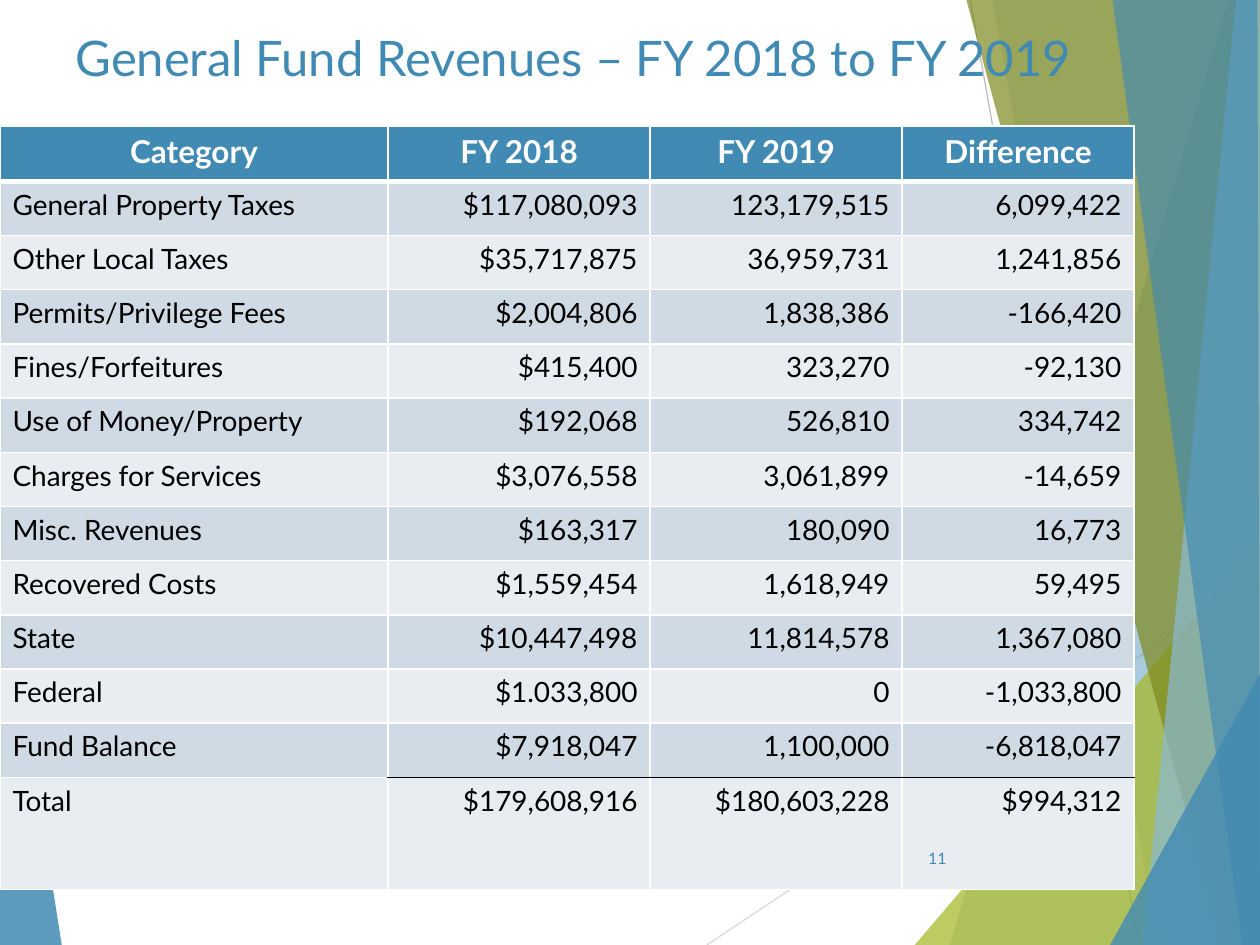
import lxml.etree
import pptx
import pptx.dml.color
import pptx.enum.shapes
import pptx.enum.text
import pptx.oxml.ns
import pptx.util

COLORS = {
    "blue": "418AB3", "sky": "8ABAD4", "lime": "A6B727", "olive": "7D891D",
    "silver": "D9D9D9", "gray": "BFBFBF", "white": "FFFFFF", "black": "000000",
    "band_dark": "CFDAE5", "band_light": "E9EDF2",
}
FONT = "Lato"
COLS, ROWS = 100, 75  # slide grid
ALIGN = pptx.enum.text.PP_ALIGN
ANCHOR = pptx.enum.text.MSO_ANCHOR

# Bands of the backdrop, back to front: colour, opacity in percent, corners
LEFT_BAND = ("blue", 85, [(0, 43.9), (4.9, 75), (0, 75)])
RIGHT_BANDS = [
    ("blue", 30, [(97.5, 0), (75.4, 75), (100, 75), (100, 0)]),
    ("blue", 20, [(78.8, 0), (91.9, 75), (100, 75), (100, 0)]),
    ("lime", 72, [(72.6, 75), (100, 42.9), (100, 75)]),
    ("olive", 70, [(76.7, 0), (97, 75), (100, 75), (100, 0)]),
    ("sky", 70, [(98.1, 0), (90.7, 75), (100, 75), (100, 0)]),
    ("blue", 65, [(88.3, 0), (98.6, 75), (100, 75), (99.8, 0)]),
    ("blue", 80, [(88.1, 75), (100, 53.5), (100, 75)]),
]
REVENUES = [
    ("Category", "FY 2018", "FY 2019", "Difference"),
    ("General Property Taxes", "$117,080,093", "123,179,515", "6,099,422"),
    ("Other Local Taxes", "$35,717,875", "36,959,731", "1,241,856"),
    ("Permits/Privilege Fees", "$2,004,806", "1,838,386", "-166,420"),
    ("Fines/Forfeitures", "$415,400", "323,270", "-92,130"),
    ("Use of Money/Property", "$192,068", "526,810", "334,742"),
    ("Charges for Services", "$3,076,558", "3,061,899", "-14,659"),
    ("Misc. Revenues", "$163,317", "180,090", "16,773"),
    ("Recovered Costs", "$1,559,454", "1,618,949", "59,495"),
    ("State", "$10,447,498", "11,814,578", "1,367,080"),
    ("Federal", "$1.033,800", "0", "-1,033,800"),
    ("Fund Balance", "$7,918,047", "1,100,000", "-6,818,047"),
    ("Total", "$179,608,916", "$180,603,228", "$994,312"),
]


def rgb(name):
    return pptx.dml.color.RGBColor.from_string(COLORS[name])


def sub(parent, tag, **attrs):
    return lxml.etree.SubElement(parent, pptx.oxml.ns.qn(tag), attrs)


class Deck:
    def __init__(self):
        self.prs = pptx.Presentation()
        self.prs.slide_width = pptx.util.Inches(10)
        self.prs.slide_height = pptx.util.Inches(7.5)
        self.s = self.prs.slides.add_slide(self.prs.slide_layouts[5])

    def x(self, cols):
        return round(self.prs.slide_width * cols / COLS)

    def y(self, rows):
        return round(self.prs.slide_height * rows / ROWS)

    def box(self, left, top, width, height):
        return self.x(left), self.y(top), self.x(width), self.y(height)

    def add_text(self, tf, text, size, color, align=ALIGN.LEFT, bold=False):
        p = tf.paragraphs[0]
        p.alignment = align
        r = p.add_run()
        r.text = text
        r.font.name, r.font.size, r.font.bold = FONT, pptx.util.Pt(size), bold
        r.font.color.rgb = rgb(color)

    def band(self, color, opacity, corners):
        points = [(self.x(cx), self.y(cy)) for cx, cy in corners]
        builder = self.s.shapes.build_freeform(*points[0])
        builder.add_line_segments(points[1:], close=True)
        sp = builder.convert_to_shape()
        sp.shadow.inherit = False
        sp.line.fill.background()
        sp.fill.solid()
        sp.fill.fore_color.rgb = rgb(color)
        clr = sp._element.spPr.find(".//" + pptx.oxml.ns.qn("a:srgbClr"))
        sub(clr, "a:alpha", val=str(opacity * 1000))

    def line(self, x1, y1, x2, y2, color):
        cxn = self.s.shapes.add_connector(
            pptx.enum.shapes.MSO_CONNECTOR.STRAIGHT,
            self.x(x1), self.y(y1), self.x(x2), self.y(y2))
        cxn.line.color.rgb = rgb(color)
        cxn.line.width = pptx.util.Pt(0.75)
        sub(cxn._element.spPr, "a:effectLst")

    def title(self, text, *area):
        sp = self.s.shapes.title
        self.s.shapes._spTree.append(sp._element)  # in front of the backdrop
        sp.left, sp.top, sp.width, sp.height = self.box(*area)
        tf = sp.text_frame
        tf.auto_size = pptx.enum.text.MSO_AUTO_SIZE.NONE
        tf.vertical_anchor = ANCHOR.TOP
        self.add_text(tf, text, 28, "blue")

    def borders(self, cell, **edges):
        """Draw white 1 pt edges, except those given as edge=(colour, points)."""
        tcPr = cell._tc.get_or_add_tcPr()
        for edge in "LRTB":
            color, width = edges.get(edge, ("white", 1))
            ln = sub(tcPr, "a:ln" + edge, w=str(pptx.util.Pt(width)))
            sub(sub(ln, "a:solidFill"), "a:srgbClr", val=COLORS[color])

    def table(self, rows, left, top, widths, heights):
        area = self.box(left, top, sum(widths), sum(heights))
        tbl = self.s.shapes.add_table(len(rows), len(widths), *area).table
        tbl.horz_banding = False
        for col, width in zip(tbl.columns, widths):
            col.width = self.x(width)
        for row, height in zip(tbl.rows, heights):
            row.height = self.y(height)
        total = len(rows) - 1
        for i, values in enumerate(rows):
            for j, value in enumerate(values):
                cell = tbl.cell(i, j)
                edges = {}
                if i == 0:
                    edges["B"] = ("white", 3)
                elif i == 1:
                    edges["T"] = ("white", 3)
                elif j and i >= total - 1:  # rule above the totals
                    edges["T" if i == total else "B"] = ("black", 1)
                self.borders(cell, **edges)
                cell.fill.solid()
                if i == 0:
                    cell.fill.fore_color.rgb = rgb("blue")
                    self.add_text(cell.text_frame, value, 18, "white", ALIGN.CENTER, True)
                else:
                    cell.fill.fore_color.rgb = rgb("band_dark" if i % 2 else "band_light")
                    self.add_text(cell.text_frame, value, 16, "black",
                                  ALIGN.RIGHT if j else ALIGN.LEFT)

    def page_number(self, text, *area):
        tf = self.s.shapes.add_textbox(*self.box(*area)).text_frame
        tf.word_wrap = True
        tf.vertical_anchor = ANCHOR.MIDDLE
        self.add_text(tf, text, 9, "blue", ALIGN.RIGHT)


def main():
    deck = Deck()
    deck.band(*LEFT_BAND)
    deck.line(56.1, 75, 100, 45.7, "silver")
    deck.line(77, 0, 90.4, 75, "gray")
    for band in RIGHT_BANDS:
        deck.band(*band)
    deck.title("General Fund Revenues – FY 2018 to FY 2019", 5, 1.7, 90, 10)
    deck.table(REVENUES, 0, 10, [30.8, 20.8, 20, 18.4], [4.4] + [4.3] * 11 + [8.9])
    deck.page_number("11", 70.5, 66.1, 5.6, 4)
    deck.prs.save("out.pptx")


if __name__ == "__main__":
    main()
